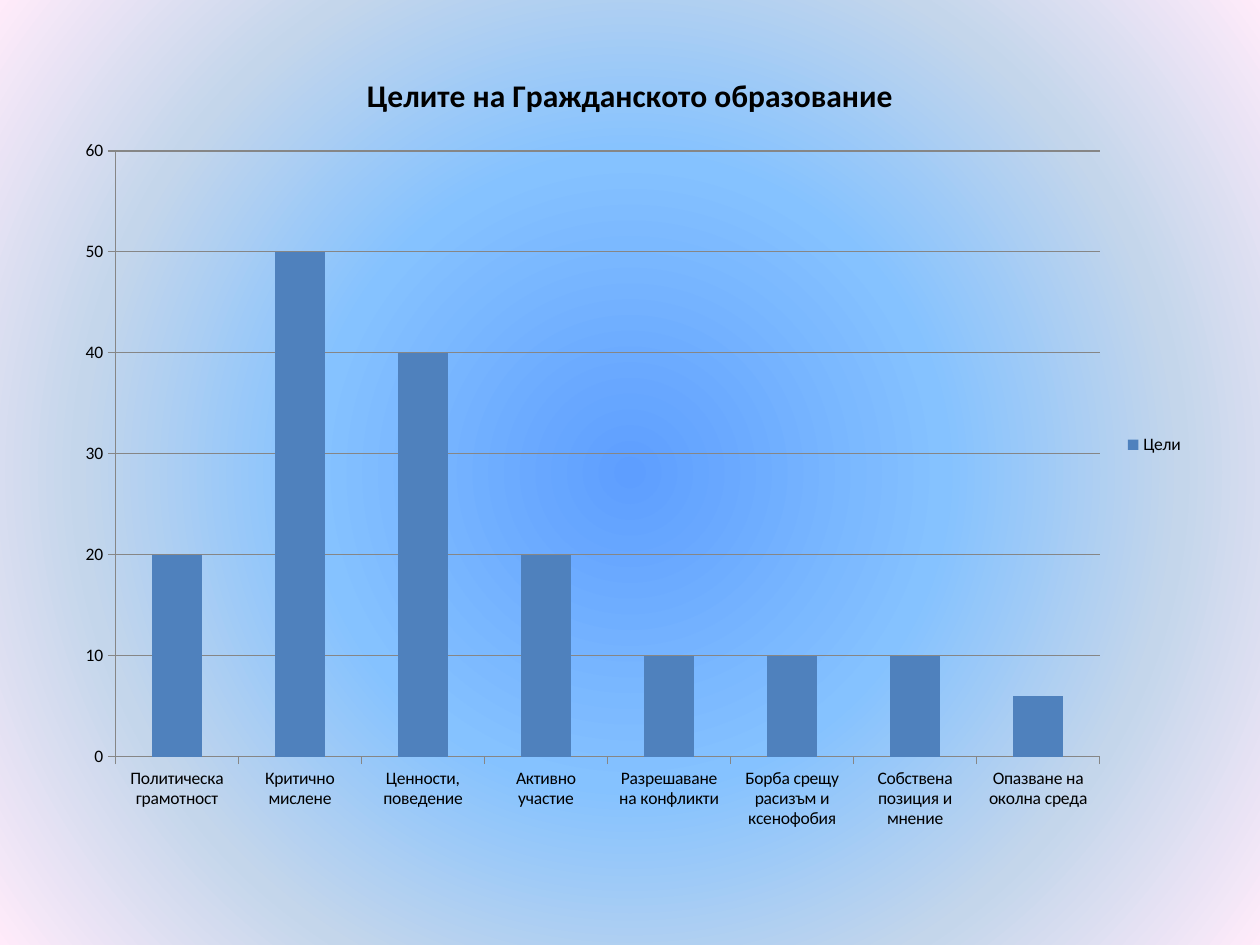
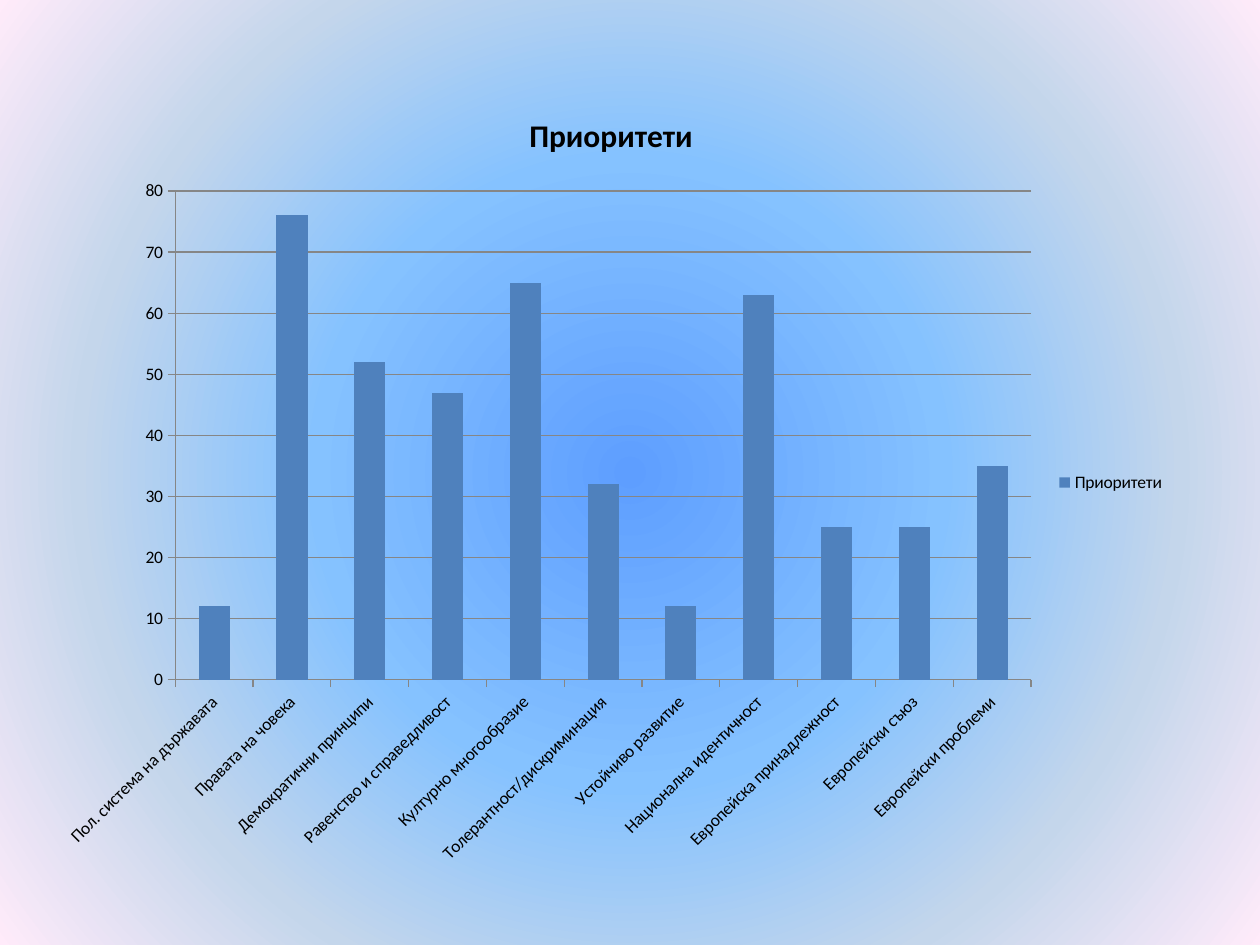
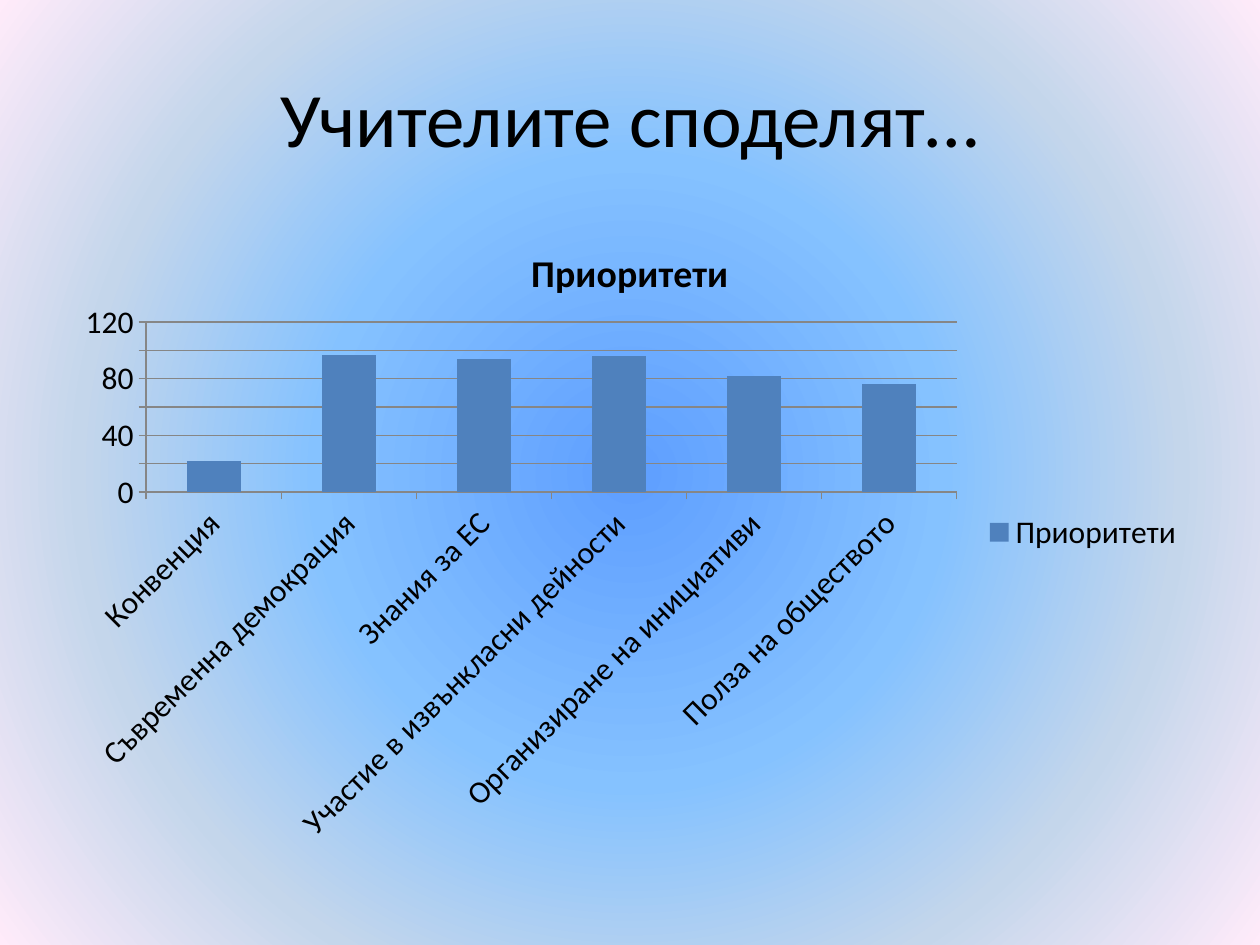
"""Build three slides of column charts on civic education."""
from pptx import Presentation
from pptx.chart.data import CategoryChartData
from pptx.dml.color import RGBColor
from pptx.enum.chart import XL_CHART_TYPE, XL_LEGEND_POSITION, XL_TICK_MARK
from pptx.enum.text import MSO_ANCHOR, PP_ALIGN
from pptx.oxml import parse_xml
from pptx.oxml.ns import nsdecls, qn
from pptx.util import Inches, Pt

COLUMN = XL_CHART_TYPE.COLUMN_CLUSTERED
RIGHT = XL_LEGEND_POSITION.RIGHT
OUTSIDE = XL_TICK_MARK.OUTSIDE
MIDDLE = MSO_ANCHOR.MIDDLE
CENTER = PP_ALIGN.CENTER

FONT = "Calibri"
BLACK = RGBColor(0x00, 0x00, 0x00)
GRAY = RGBColor(0x86, 0x86, 0x86)
BLUE = RGBColor(0x4F, 0x81, 0xBD)
GLOW = [
    (0, RGBColor(0x5E, 0x9E, 0xFF)),
    (40, RGBColor(0x85, 0xC2, 0xFF)),
    (70, RGBColor(0xC4, 0xD6, 0xEB)),
    (100, RGBColor(0xFF, 0xEB, 0xFA)),
]
TITLE_ONLY, BLANK = 5, 6

SLIDES = [
    {
        "heading": None,
        "box": (0.5, 0.36, 9, 6.34),
        "size": 10,
        "title": ("Целите на Гражданското образование", 18),
        "series": "Цели",
        "data": [
            ("Политическа грамотност", 20),
            ("Критично мислене", 50),
            ("Ценности, поведение", 40),
            ("Активно участие", 20),
            ("Разрешаване на конфликти", 10),
            ("Борба срещу расизъм и ксенофобия", 10),
            ("Собствена позиция и мнение", 10),
            ("Опазване на околна среда", 6),
        ],
    },
    {
        "heading": None,
        "box": (0.35, 0.68, 9, 6.3),
        "size": 10,
        "title": ("Приоритети", 18),
        "series": "Приоритети",
        "data": [
            ("Пол. система на държавата", 12),
            ("Правата на човека", 76),
            ("Демократични принципи", 52),
            ("Равенство и справедливост", 47),
            ("Културно многообразие", 65),
            ("Толерантност/дискриминация", 32),
            ("Устойчиво развитие", 12),
            ("Национална идентичност", 63),
            ("Европейска принадлежност", 25),
            ("Европейски съюз", 25),
            ("Европейски проблеми", 35),
        ],
    },
    {
        "heading": "Учителите споделят…",
        "box": (0.5, 1.75, 9, 4.95),
        "size": 18,
        "title": ("Приоритети", 21.6),
        "series": "Приоритети",
        "data": [
            ("Конвенция", 22),
            ("Съвременна демокрация", 97),
            ("Знания за ЕС", 94),
            ("Участие в извънкласни дейности", 96),
            ("Организиране на инициативи", 82),
            ("Полза на обществото", 76),
        ],
    },
]


def set_background(master):
    stops = "".join(
        f'<a:gs pos="{pos * 1000}"><a:srgbClr val="{color}"/></a:gs>'
        for pos, color in GLOW
    )
    bg = parse_xml(
        f'<p:bg {nsdecls("p", "a")}><p:bgPr><a:gradFill><a:gsLst>{stops}</a:gsLst>'
        '<a:path path="circle"><a:fillToRect l="50000" t="50000" r="50000" b="50000"/>'
        "</a:path></a:gradFill><a:effectLst/></p:bgPr></p:bg>"
    )
    c_sld = master.element.find(qn("p:cSld"))
    for old in c_sld.findall(qn("p:bg")):
        c_sld.remove(old)
    c_sld.insert(0, bg)


def style_font(font, size, bold=False):
    font.name = FONT
    font.size = Pt(size)
    font.bold = bold
    font.color.rgb = BLACK


def style_line(line):
    line.color.rgb = GRAY
    line.width = Pt(0.75)


def add_heading(slide, text):
    title = slide.shapes.title
    title.left, title.top = Inches(0.5), Inches(0.3)
    title.width, title.height = Inches(9), Inches(1.25)
    tf = title.text_frame
    tf.text = text
    tf.vertical_anchor = MIDDLE
    p = tf.paragraphs[0]
    p.alignment = CENTER
    style_font(p.font, 44)


def add_column_chart(slide, content):
    chart_data = CategoryChartData()
    categories, values = zip(*content["data"])
    chart_data.categories = categories
    chart_data.add_series(content["series"], values)
    box = [Inches(n) for n in content["box"]]
    chart = slide.shapes.add_chart(COLUMN, *box, chart_data).chart
    style_font(chart.font, content["size"])

    text, size = content["title"]
    chart.has_title = True
    tf = chart.chart_title.text_frame
    tf.text = text
    style_font(tf.paragraphs[0].font, size, bold=True)
    chart.chart_title.include_in_layout = False

    chart.has_legend = True
    chart.legend.position = RIGHT
    chart.legend.include_in_layout = False

    for axis in (chart.category_axis, chart.value_axis):
        axis.major_tick_mark = OUTSIDE
        style_line(axis.format.line)
    chart.value_axis.has_major_gridlines = True
    style_line(chart.value_axis.major_gridlines.format.line)

    plot = chart.plots[0]
    plot.gap_width = 150
    plot.vary_by_categories = False
    fill = plot.series[0].format.fill
    fill.solid()
    fill.fore_color.rgb = BLUE


def main():
    prs = Presentation()
    prs.slide_width, prs.slide_height = Inches(10), Inches(7.5)
    set_background(prs.slide_master)
    for content in SLIDES:
        layout = TITLE_ONLY if content["heading"] else BLANK
        slide = prs.slides.add_slide(prs.slide_layouts[layout])
        if content["heading"]:
            add_heading(slide, content["heading"])
        add_column_chart(slide, content)
    prs.save("out.pptx")


if __name__ == "__main__":
    main()
